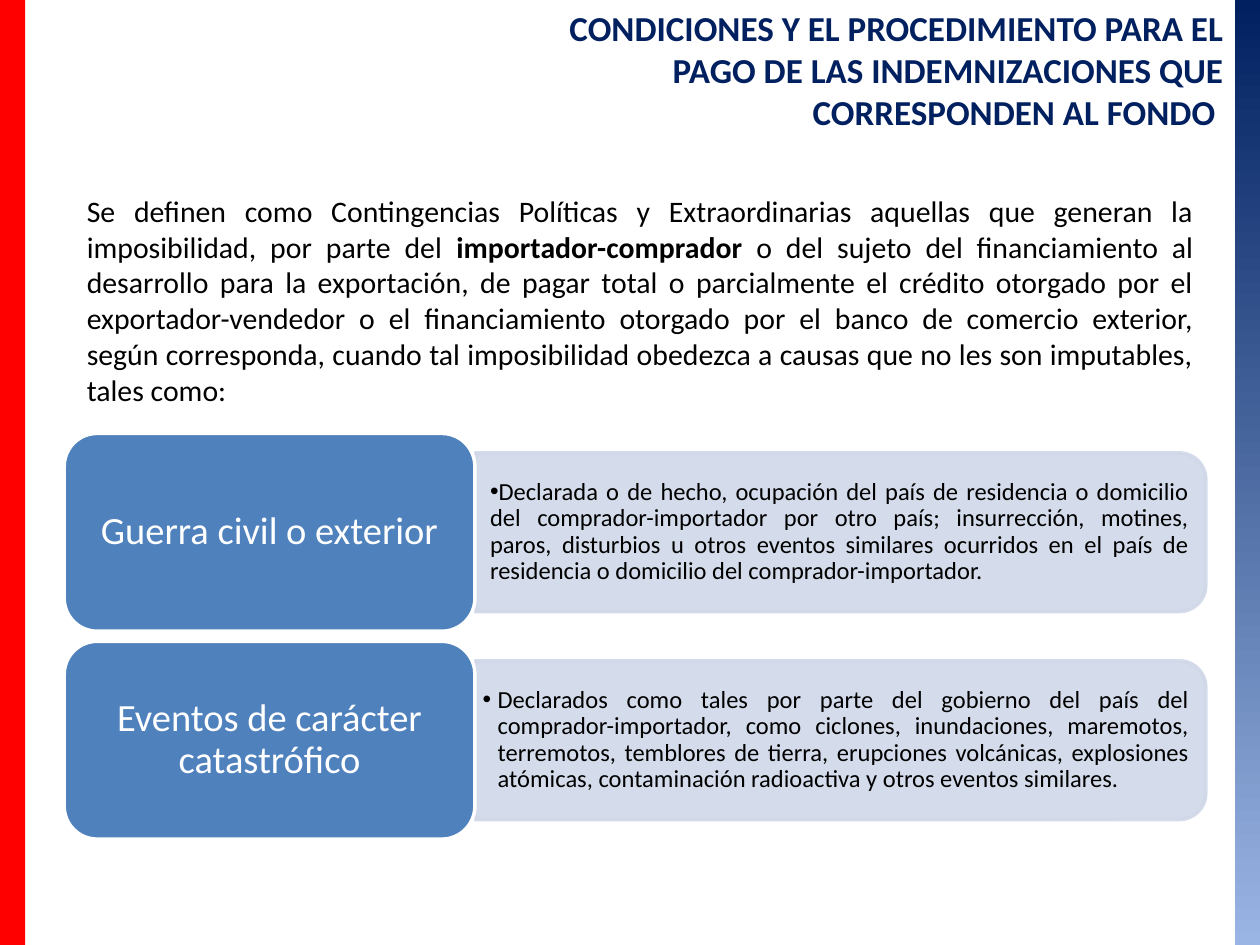
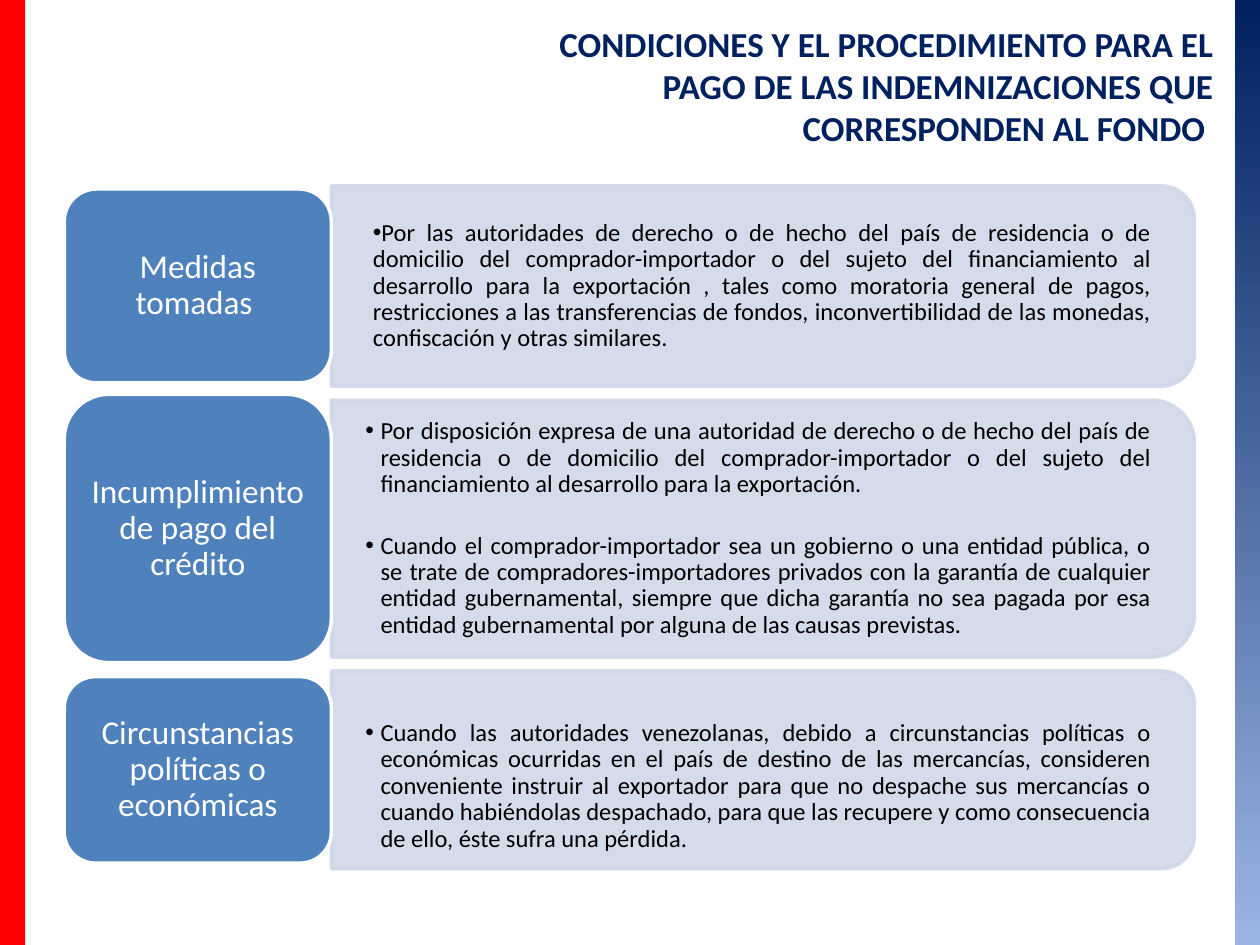
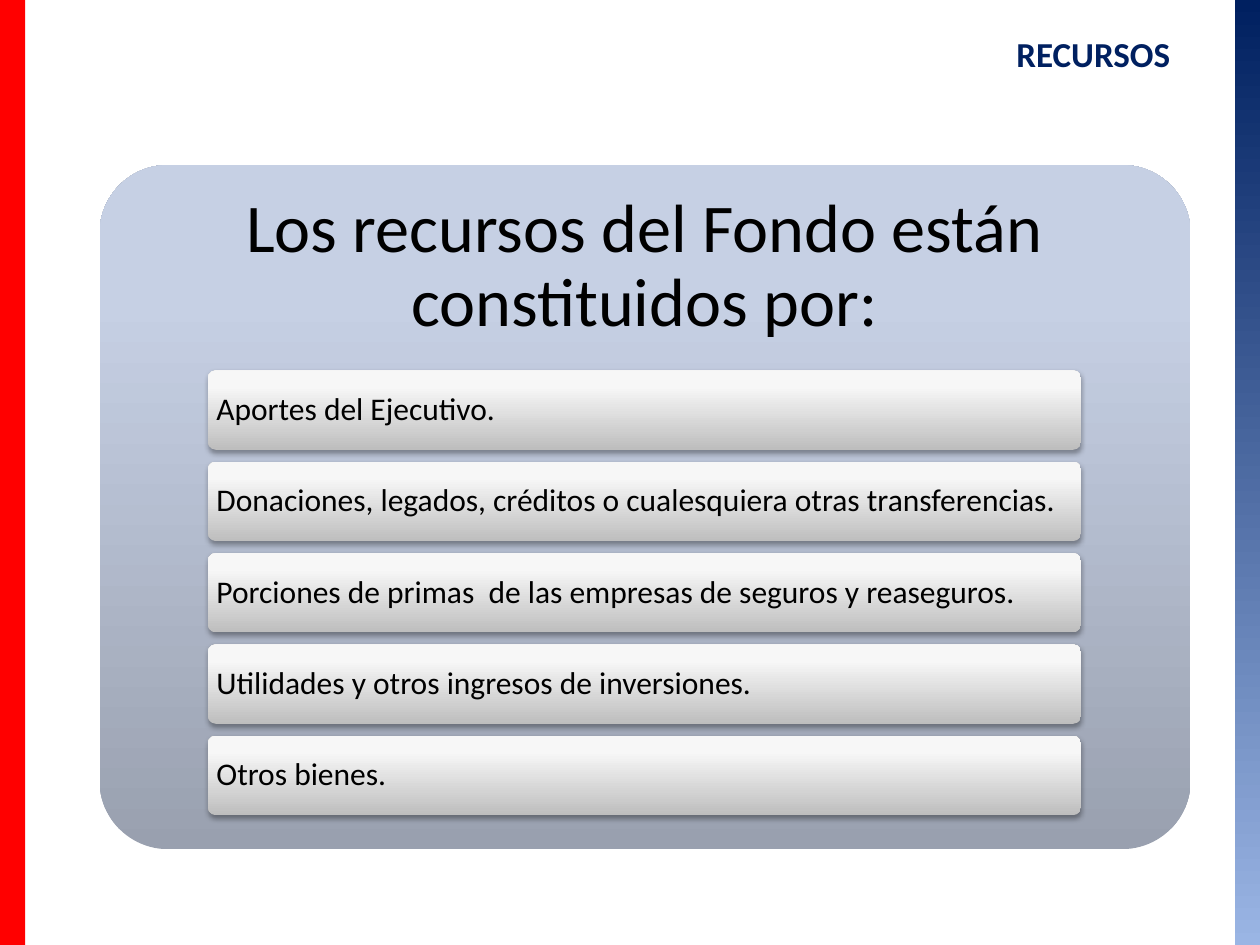
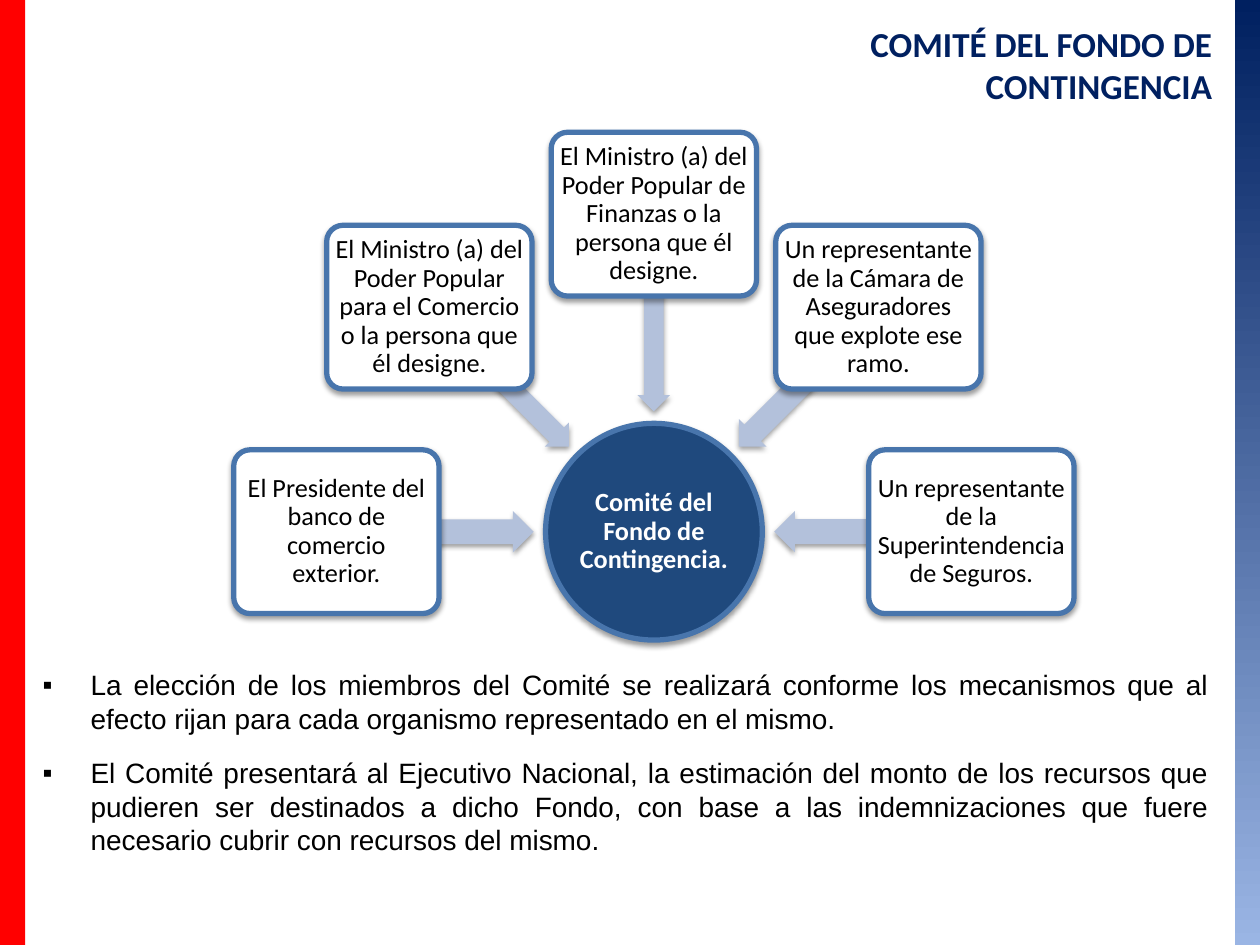
"""Builds four slides on the contingency fund: covered events, resources and committee."""
from math import cos, radians, sin

from lxml.etree import SubElement
from pptx import Presentation
from pptx.dml.color import RGBColor
from pptx.enum.shapes import MSO_SHAPE
from pptx.enum.text import MSO_ANCHOR, PP_ALIGN
from pptx.oxml.ns import qn
from pptx.util import Inches, Pt

COLORS = {
    "red": "FF0000", "navy": "002060", "sky": "9AB5E4", "white": "FFFFFF", "black": "000000",
    "label": "4F81BD", "panel": "D0D8E8", "hub": "1F497D", "rim": "4875AC", "arrow": "B3C1DB",
    "slate": "99A0AF", "mist": "C6D0E4", "silver": "BEBEBE", "pearl": "F7F7F7",
}

deck = Presentation()
deck.slide_width, deck.slide_height = Inches(10), Inches(7.5)
COL, ROW = deck.slide_width / 100, deck.slide_height / 75


def draw(slide, form, box, fill, line=None, weight=2, alpha=None, shade=None, corner=None, turn=0, blend=1):
    """Add a preset shape; box is in columns and rows, a pair of fills blends from bottom to top."""
    left, top, width, height = box
    shape = slide.shapes.add_shape(form, int(left * COL), int(top * ROW), int(width * COL), int(height * ROW))
    shape.rotation = turn
    shape.shadow.inherit = False
    for place, value in enumerate(corner or []):
        shape.adjustments[place] = value
    if isinstance(fill, tuple):
        shape.fill.gradient()
        shape.fill.gradient_angle = 90
        for stop, tone, position in zip(shape.fill.gradient_stops, fill, (0, blend)):
            stop.color.rgb = RGBColor.from_string(COLORS[tone])
            stop.position = position
    else:
        shape.fill.solid()
        shape.fill.fore_color.rgb = RGBColor.from_string(COLORS[fill])
    if line:
        shape.line.color.rgb = RGBColor.from_string(COLORS[line])
        shape.line.width = Pt(weight)
    else:
        shape.line.fill.background()
    properties = shape._element.spPr
    if alpha:
        for tone in properties.iter(qn("a:srgbClr")):
            SubElement(tone, qn("a:alpha"), val=str(alpha * 1000))
    if shade:
        glow = SubElement(properties.find(qn("a:effectLst")), qn("a:outerShdw"), blurRad=str(Pt(3.1)),
                          dist=str(Pt(1.7)), dir="5400000", rotWithShape="0")
        SubElement(SubElement(glow, qn("a:srgbClr"), val=COLORS["black"]), qn("a:alpha"), val=str(shade * 1000))
    return shape


def write(holder, paragraphs, size, color="black", box=None, align=PP_ALIGN.LEFT, anchor=MSO_ANCHOR.MIDDLE,
          pad=(1, 0.5), spacing=0.9, gap=0, indent=None, bullet=None, level=0, bold=False, font="Calibri"):
    """Fill a shape, or a new text box on a slide when box is given; ** marks bold words."""
    if box:
        left, top, width, height = box
        holder = holder.shapes.add_textbox(int(left * COL), int(top * ROW), int(width * COL), int(height * ROW))
    frame = holder.text_frame
    across, down = int(pad[0] * COL), int(pad[1] * ROW)
    frame_format = {"word_wrap": True, "vertical_anchor": anchor, "margin_left": across,
                    "margin_right": across, "margin_top": down, "margin_bottom": down}
    for name, value in frame_format.items():
        setattr(frame, name, value)
    for number, text in enumerate(paragraphs):
        paragraph = frame.add_paragraph() if number else frame.paragraphs[0]
        if indent:
            margin, hang = indent
            paragraph._p.get_or_add_pPr().set("marL", str(int(margin * COL)))
            paragraph._p.pPr.set("indent", str(int(hang * COL)))
        if bullet:
            SubElement(paragraph._p.get_or_add_pPr(), qn("a:buFont"), typeface="Arial")
            SubElement(paragraph._p.pPr, qn("a:buChar"), char=bullet)
        paragraph_format = {"alignment": align, "level": level, "line_spacing": spacing,
                            "space_before": Pt(gap if number else 0)}
        for name, value in paragraph_format.items():
            setattr(paragraph, name, value)
        for piece, words in enumerate(text.split("**")):
            run = paragraph.add_run()
            run.text = words
            run_format = {"name": font, "size": Pt(size), "bold": bold or piece % 2 == 1}
            for name, value in run_format.items():
                setattr(run.font, name, value)
            run.font.color.rgb = RGBColor.from_string(COLORS[color])


blank = deck.slide_layouts[6]
events, measures, resources, committee = [deck.slides.add_slide(blank) for _ in range(4)]

for number, (band_left, band_fill) in enumerate([(0, "red"), (98, ("sky", "navy"))]):
    band = draw(events, MSO_SHAPE.RECTANGLE, (band_left, 0, 2, 75), band_fill)
    band._element.nvSpPr.cNvPr.set("id", str(20 + number))
    deck.slide_master.shapes._spTree.append(band._element)

conditions = "CONDICIONES Y EL PROCEDIMIENTO PARA EL PAGO DE LAS INDEMNIZACIONES QUE CORRESPONDEN AL FONDO "
titles = [
    (events, conditions, (39.8, 0, 58.3, 11.1)),
    (measures, conditions, (39, 1.3, 58.3, 11.1)),
    (resources, "RECURSOS ", (73.6, 2.1, 20.9, 4.4)),
    (committee, "COMITÉ DEL FONDO DE CONTINGENCIA", (55.5, 1.3, 41.7, 11.1)),
]
for slide, title, box in titles:
    write(slide, [title], 20, "navy", box, PP_ALIGN.RIGHT, MSO_ANCHOR.TOP,
          spacing=1.0, indent=(3.8, -3.8), bold=True)

write(events, [
    "Se definen como Contingencias Políticas y Extraordinarias aquellas que generan la imposibilidad, por parte "
    "del **importador-comprador** o del sujeto del financiamiento al desarrollo para la exportación, de pagar "
    "total o parcialmente el crédito otorgado por el exportador-vendedor o el financiamiento otorgado por el "
    "banco de comercio exterior, según corresponda, cuando tal imposibilidad obedezca a causas que no les son "
    "imputables, tales como:",
], 17, box=(5.9, 14.7, 89.8, 18.2), align=PP_ALIGN.JUSTIFY, spacing=1.0)

flush, hanging = (0.6, 0), (1.2, -1.2)
event_rows = [
    ("Guerra civil o exterior", 34.4, 15.7, 12.6, flush, 0, [
        "Declarada o de hecho, ocupación del país de residencia o domicilio del comprador-importador por otro "
        "país; insurrección, motines, paros, disturbios u otros eventos similares ocurridos en el país de "
        "residencia o domicilio del comprador-importador."]),
    ("Eventos de carácter catastrófico", 50.9, 15.7, 12.6, hanging, 0, [
        "Declarados como tales por parte del gobierno del país del comprador-importador, como ciclones, "
        "inundaciones, maremotos, terremotos, temblores de tierra, erupciones volcánicas, explosiones atómicas, "
        "contaminación radioactiva y otros eventos similares."]),
]
measure_rows = [
    ("Medidas tomadas ", 15, 15.4, 15.9, flush, 0, [
        "Por las autoridades de derecho o de hecho del país de residencia o de domicilio del "
        "comprador-importador o del sujeto del financiamiento al desarrollo para la exportación , tales como "
        "moratoria general de pagos, restricciones a las transferencias de fondos, inconvertibilidad de las "
        "monedas, confiscación y otras similares."]),
    ("Incumplimiento de pago del crédito", 31.3, 21.3, 20.4, hanging, 0, [
        "Por disposición expresa de una autoridad de derecho o de hecho del país de residencia o de domicilio "
        "del comprador-importador o del sujeto del financiamiento al desarrollo para la exportación.",
        "Cuando el comprador-importador sea un gobierno o una entidad pública, o se trate de "
        "compradores-importadores privados con la garantía de cualquier entidad gubernamental, siempre que "
        "dicha garantía no sea pagada por esa entidad gubernamental por alguna de las causas previstas."]),
    ("Circunstancias políticas o económicas", 53.7, 14.8, 15.7, hanging, 1.3, [
        "Cuando las autoridades venezolanas, debido a circunstancias políticas o económicas ocurridas en el "
        "país de destino de las mercancías, consideren conveniente instruir al exportador para que no despache "
        "sus mercancías o cuando habiéndolas despachado, para que las recupere y como consecuencia de ello, "
        "éste sufra una pérdida."]),
]
label_left = 5.1
for slide, rows, label_width, panel_width, label_size, label_pad, detail_pad in [
    (events, event_rows, 32.6, 58, 22, (0.9, 0.5), (0.6, 0.3)),
    (measures, measure_rows, 21.2, 68.5, 19, (0.8, 0.4), (2.7, 1.4)),
]:
    panel_left = label_left + label_width
    for label, label_top, label_height, panel_height, indent, drop, details in rows:
        middle = label_top + label_height / 2
        draw(slide, MSO_SHAPE.ROUND_2_SAME_RECTANGLE,
             (panel_left + (panel_width - panel_height) / 2, middle - panel_width / 2, panel_height, panel_width),
             "panel", "panel", alpha=90, turn=90)
        write(slide, details, 14, box=(panel_left, middle - panel_height / 2 + drop, panel_width - 0.7, panel_height),
              align=PP_ALIGN.JUSTIFY, pad=detail_pad, gap=20, indent=indent, bullet="•", level=1)
        label_card = draw(slide, MSO_SHAPE.ROUNDED_RECTANGLE,
                          (label_left, label_top, label_width, label_height), "label", "white")
        write(label_card, [label], label_size, "white", align=PP_ALIGN.CENTER, pad=label_pad)

draw(resources, MSO_SHAPE.ROUNDED_RECTANGLE, (7.9, 13.1, 86.6, 54.3), ("slate", "mist"), corner=[0.1], blend=0.8)
write(resources, ["Los recursos del Fondo están constituidos por:"], 39, box=(8.3, 13.6, 85.7, 15.3),
      align=PP_ALIGN.CENTER, pad=(1.6, 1.6))
sources = [
    "Aportes del Ejecutivo.",
    "Donaciones, legados, créditos o cualesquiera otras transferencias.",
    "Porciones de primas  de las empresas de seguros y reaseguros.",
    "Utilidades y otros ingresos de inversiones.",
    "Otros bienes.",
]
for number, source in enumerate(sources):
    source_bar = draw(resources, MSO_SHAPE.ROUNDED_RECTANGLE, (16.5, 29.4 + 7.25 * number, 69.3, 6.3),
                      ("silver", "pearl"), shade=35, corner=[0.1], blend=0.8)
    write(source_bar, [source], 18, pad=(0.5, 0.4))

hub_x, hub_y, hub_size = 51.9, 42.2, 17.2
member_width, member_height, member_radius = 16.3, 13, 25.2
arrow_length, arrow_radius = 15.7, 17.4
hub = draw(committee, MSO_SHAPE.OVAL, (hub_x - hub_size / 2, hub_y - hub_size / 2, hub_size, hub_size),
           "hub", "rim", 3, shade=38)
write(hub, ["Comité del Fondo de Contingencia."], 15, "white", align=PP_ALIGN.CENTER, pad=(0.1, 0.1), bold=True)
members = [
    ("El Presidente del banco de comercio exterior.", 3.3),
    ("El Ministro (a) del Poder Popular para el Comercio o la persona que él designe.", 2.7),
    ("El Ministro (a) del Poder Popular de Finanzas o la persona que él designe.", 2.6),
    ("Un representante de la Cámara de Aseguradores que explote ese ramo.", 3.1),
    ("Un representante de la Superintendencia de Seguros.", 3.3),
]
for number, (member, arrow_height) in enumerate(members):
    angle = (180 + 45 * number) % 360
    across, down = cos(radians(angle)), sin(radians(angle))
    draw(committee, MSO_SHAPE.LEFT_ARROW,
         (hub_x + arrow_radius * across - arrow_length / 2, hub_y + arrow_radius * down - arrow_height / 2,
          arrow_length, arrow_height), "arrow", shade=38, corner=[0.6, 0.5], turn=angle)
    member_card = draw(committee, MSO_SHAPE.ROUNDED_RECTANGLE,
                       (hub_x + member_radius * across - member_width / 2,
                        hub_y + member_radius * down - member_height / 2, member_width, member_height),
                       "white", "rim", 3, shade=38, corner=[0.1])
    write(member_card, [member], 15, align=PP_ALIGN.CENTER, pad=(0.3, 0.3))

write(committee, [
    "La elección de los miembros del Comité se realizará conforme los mecanismos que al efecto rijan para cada "
    "organismo representado en el mismo.",
    "El Comité presentará al Ejecutivo Nacional, la estimación del monto de los recursos que pudieren ser "
    "destinados a dicho Fondo, con base a las indemnizaciones que fuere necesario cubrir con recursos del mismo.",
], 16, box=(2.4, 52.5, 94.5, 16.2), align=PP_ALIGN.JUSTIFY, anchor=MSO_ANCHOR.TOP, spacing=1.0, gap=12,
      indent=(3.8, -3.8), bullet="▪", font="Arial")

deck.save("out.pptx")
